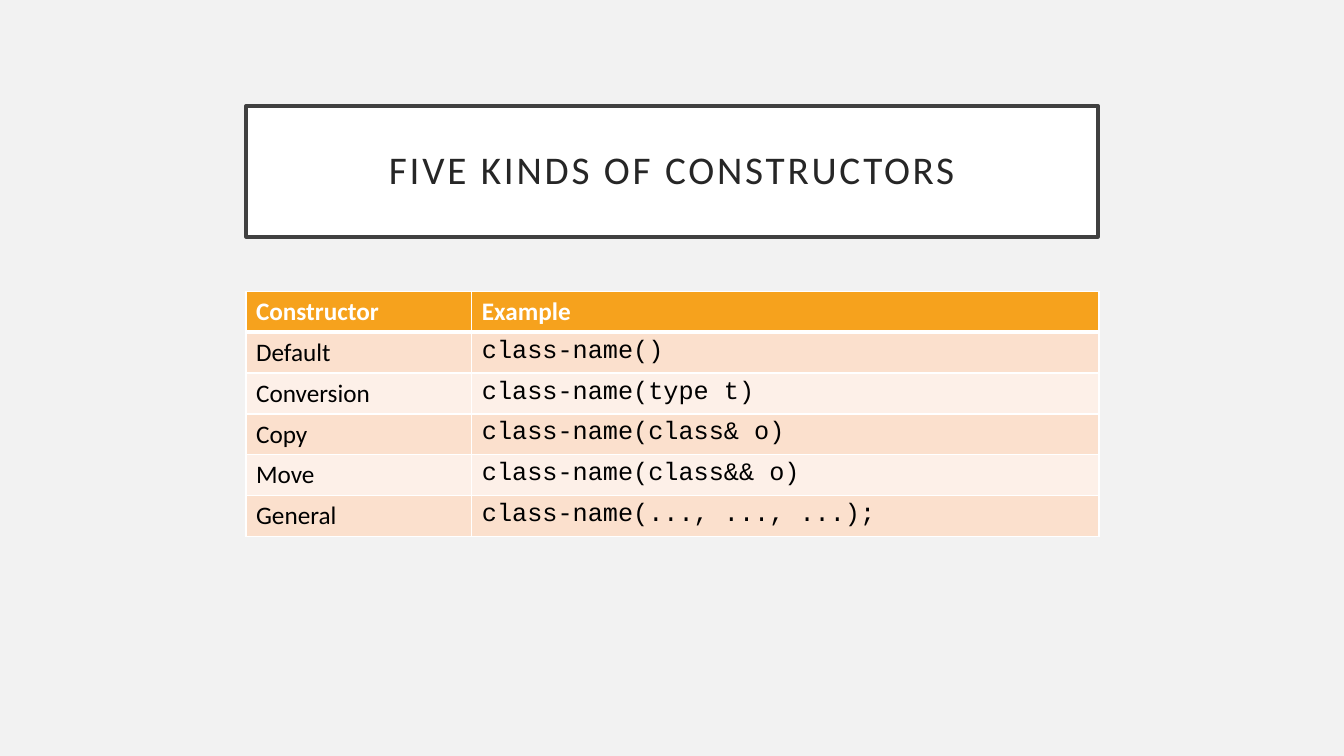
from lxml.etree import SubElement
from pptx import Presentation
from pptx.dml.color import RGBColor
from pptx.enum.shapes import MSO_SHAPE as SHAPE
from pptx.enum.text import MSO_ANCHOR as ANCHOR, PP_ALIGN as ALIGN
from pptx.oxml.ns import qn
from pptx.util import Inches, Pt

LEFT, WIDTH = 2.44, 8.45
ROW_HEIGHT = 0.405
COLUMN_WIDTHS = (2.24, 6.22)
HEADER_FILL = "F6A21D"
BAND_FILLS = ("FBE0CD", "FDF0E8")
CONSTRUCTORS = [
    ("Constructor", "Example"),
    ("Default", "class-name()"),
    ("Conversion", "class-name(type t)"),
    ("Copy", "class-name(class& o)"),
    ("Move", "class-name(class&& o)"),
    ("General", "class-name(..., ..., ...);"),
]


def rgb(color):
    return RGBColor.from_string(color)


def paint(fill, color):
    fill.solid()
    fill.fore_color.rgb = rgb(color)


def write(paragraph, text, color, **formats):
    run = paragraph.add_run()
    run.text = text
    run.font.color.rgb = rgb(color)
    for name, value in formats.items():
        setattr(run.font, name, value)
    return run


def add_title(slide, text):
    box = slide.shapes.add_shape(SHAPE.RECTANGLE, Inches(LEFT), Inches(1.05),
                                 Inches(WIDTH), Inches(1.3))
    box.shadow.inherit = False
    paint(box.fill, "FFFFFF")
    box.line.color.rgb = rgb("404040")
    box.line.width = Pt(2.5)
    frame = box.text_frame
    frame.word_wrap = True
    frame.vertical_anchor = ANCHOR.MIDDLE
    for side in ("left", "top", "right", "bottom"):
        setattr(frame, f"margin_{side}", Inches(0.2))
    heading = frame.paragraphs[0]
    heading.alignment = ALIGN.CENTER
    heading.line_spacing = 0.9
    run = write(heading, text, "262626", name="Calibri", size=Pt(28))
    run.font.bold = False
    run._r.get_or_add_rPr().set("spc", "200")


def add_borders(cell, widths):
    """Draw white borders; widths maps L, R, T, B, in that order, to points."""
    properties = cell._tc.get_or_add_tcPr()
    for side, width in widths.items():
        border = SubElement(properties, qn(f"a:ln{side}"), w=str(Pt(width)))
        solid = SubElement(border, qn("a:solidFill"))
        SubElement(solid, qn("a:srgbClr"), val="FFFFFF")


def add_constructor_table(slide, rows):
    table = slide.shapes.add_table(
        len(rows), len(COLUMN_WIDTHS), Inches(LEFT), Inches(2.89),
        Inches(WIDTH), Inches(ROW_HEIGHT * len(rows))).table
    for column, width in zip(table.columns, COLUMN_WIDTHS):
        column.width = Inches(width)
    for row_index, texts in enumerate(rows):
        is_header = row_index == 0
        fill = HEADER_FILL if is_header else BAND_FILLS[(row_index - 1) % 2]
        borders = {"L": 1, "R": 1, "T": 3 if row_index == 1 else 1,
                   "B": 3 if is_header else 1}
        for column_index, text in enumerate(texts):
            cell = table.cell(row_index, column_index)
            is_code = column_index == 1 and not is_header
            add_borders(cell, borders)
            paint(cell.fill, fill)
            write(cell.text_frame.paragraphs[0], text,
                  "FFFFFF" if is_header else "000000",
                  name="Courier New" if is_code else "Calibri",
                  size=Pt(18), bold=is_header)


def main():
    deck = Presentation()
    deck.slide_width, deck.slide_height = Inches(13.33), Inches(7.5)
    slide = deck.slides.add_slide(deck.slide_layouts[6])
    paint(slide.background.fill, "F2F2F2")
    add_title(slide, "FIVE KINDS OF CONSTRUCTORS")
    add_constructor_table(slide, CONSTRUCTORS)
    deck.save("out.pptx")


if __name__ == "__main__":
    main()
